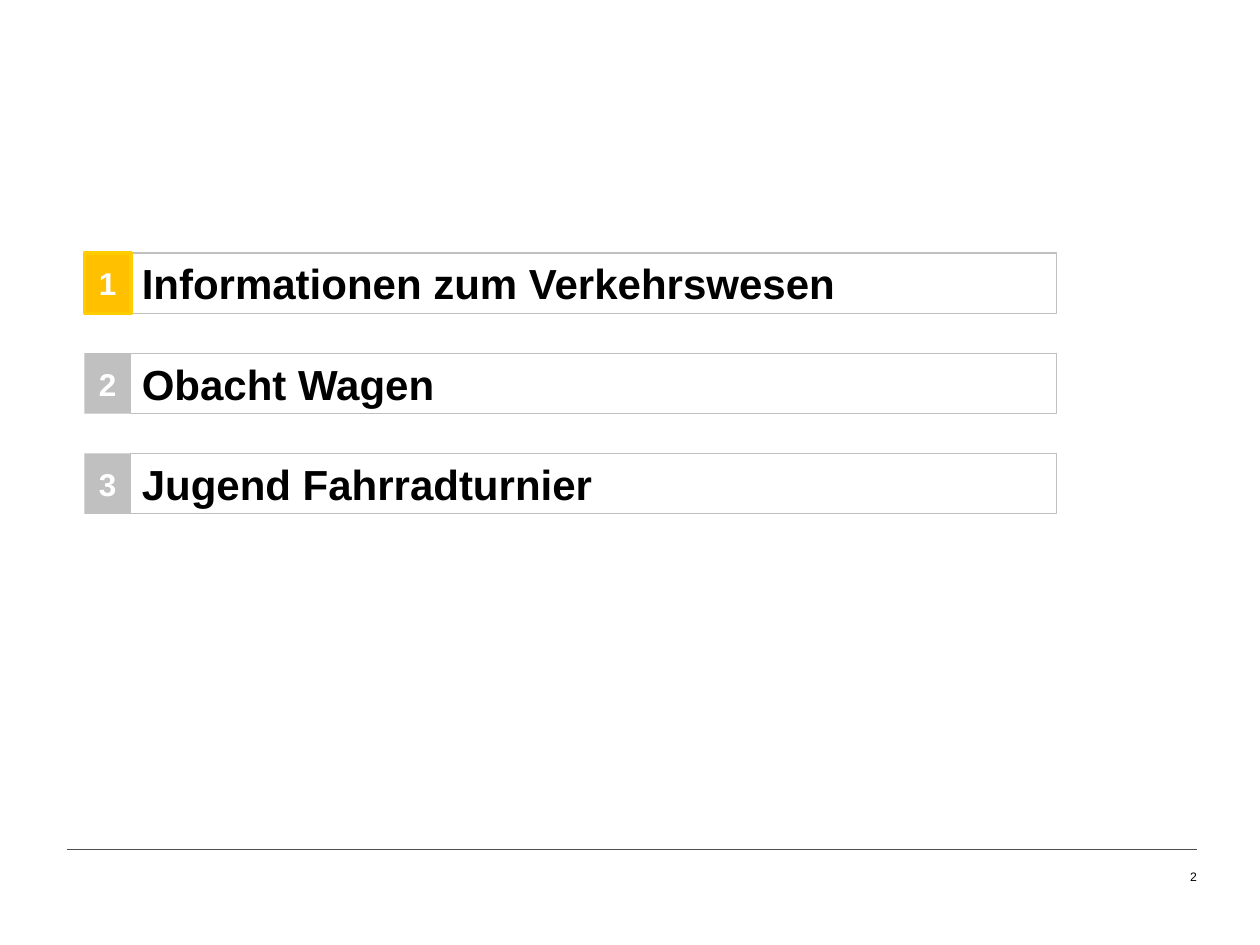
from dataclasses import dataclass

from lxml import etree
from pptx import Presentation
from pptx.dml.color import RGBColor
from pptx.enum.shapes import MSO_CONNECTOR, MSO_SHAPE
from pptx.enum.text import MSO_ANCHOR, PP_ALIGN
from pptx.oxml.ns import qn
from pptx.util import Cm, Pt

RECT = MSO_SHAPE.RECTANGLE
STRAIGHT = MSO_CONNECTOR.STRAIGHT
TOP, MIDDLE = MSO_ANCHOR.TOP, MSO_ANCHOR.MIDDLE
LEFT, CENTER, RIGHT = PP_ALIGN.LEFT, PP_ALIGN.CENTER, PP_ALIGN.RIGHT


@dataclass(frozen=True)
class Theme:
    font: str = "Arial"
    ink: str = "000000"
    paper: str = "FFFFFF"
    gray: str = "C0C0C0"
    rule: str = "4D4D4D"
    gold: str = "FFC000"
    edge: str = "FFCC00"
    title: int = 24
    digit: int = 18
    small: int = 7


THEME = Theme()
TOPICS = ["Informationen zum Verkehrswesen", "Obacht Wagen", "Jugend Fahrradturnier"]
ACTIVE = 1
FIRST, STEP, HEIGHT = 5.1, 2.02, 1.22


def rgb(code):
    return RGBColor.from_string(code)


def write(shape, text, size, color, align, anchor, bold=True, pad=(0.23, 0.1)):
    frame = shape.text_frame
    frame.word_wrap = True
    frame.vertical_anchor = anchor
    frame.margin_left = frame.margin_right = Cm(pad[0])
    frame.margin_top = frame.margin_bottom = Cm(pad[1])
    para = frame.paragraphs[0]
    para.text = text
    para.alignment = align
    font = para.font
    font.name, font.size, font.bold = THEME.font, Pt(size), bold
    font.color.rgb = rgb(color)


def add_box(slide, left, top, width, fill, line=None, weight=0.75):
    box = slide.shapes.add_shape(RECT, Cm(left), Cm(top), Cm(width), Cm(HEIGHT))
    box.shadow.inherit = False
    box.fill.solid()
    box.fill.fore_color.rgb = rgb(fill)
    if line:
        box.line.color.rgb = rgb(line)
        box.line.width = Pt(weight)
    else:
        box.line.fill.background()
    return box


def add_topic(slide, number, text):
    """Draw one agenda row: the framed title and its number tile."""
    top = FIRST + (number - 1) * STEP
    bar = add_box(slide, 2.63, top, 18.67, THEME.paper, THEME.gray)
    write(bar, text, THEME.title, THEME.ink, LEFT, TOP)
    if number == ACTIVE:
        tile = add_box(slide, 1.7, top, 0.94, THEME.gold, THEME.edge, 2)
    else:
        tile = add_box(slide, 1.7, top, 0.94, THEME.gray)
    write(tile, str(number), THEME.digit, THEME.paper, CENTER, MIDDLE)


def add_footer(slide, page):
    rule = slide.shapes.add_connector(
        STRAIGHT, Cm(1.35), Cm(17.12), Cm(24.13), Cm(17.12))
    rule.line.color.rgb = rgb(THEME.rule)
    rule.line.width = Pt(0.5)
    etree.SubElement(rule.element.spPr, qn("a:effectLst"))
    box = slide.shapes.add_textbox(Cm(23.09), Cm(17.22), Cm(1.04), Cm(0.91))
    write(box, page, THEME.small, THEME.ink, RIGHT, MIDDLE, bold=False, pad=(0, 0))


def main():
    deck = Presentation()
    deck.slide_width, deck.slide_height = Cm(25.4), Cm(19.05)
    slide = deck.slides.add_slide(deck.slide_layouts[6])
    add_footer(slide, "2")
    for number, text in enumerate(TOPICS, 1):
        add_topic(slide, number, text)
    deck.save("out.pptx")


if __name__ == "__main__":
    main()
